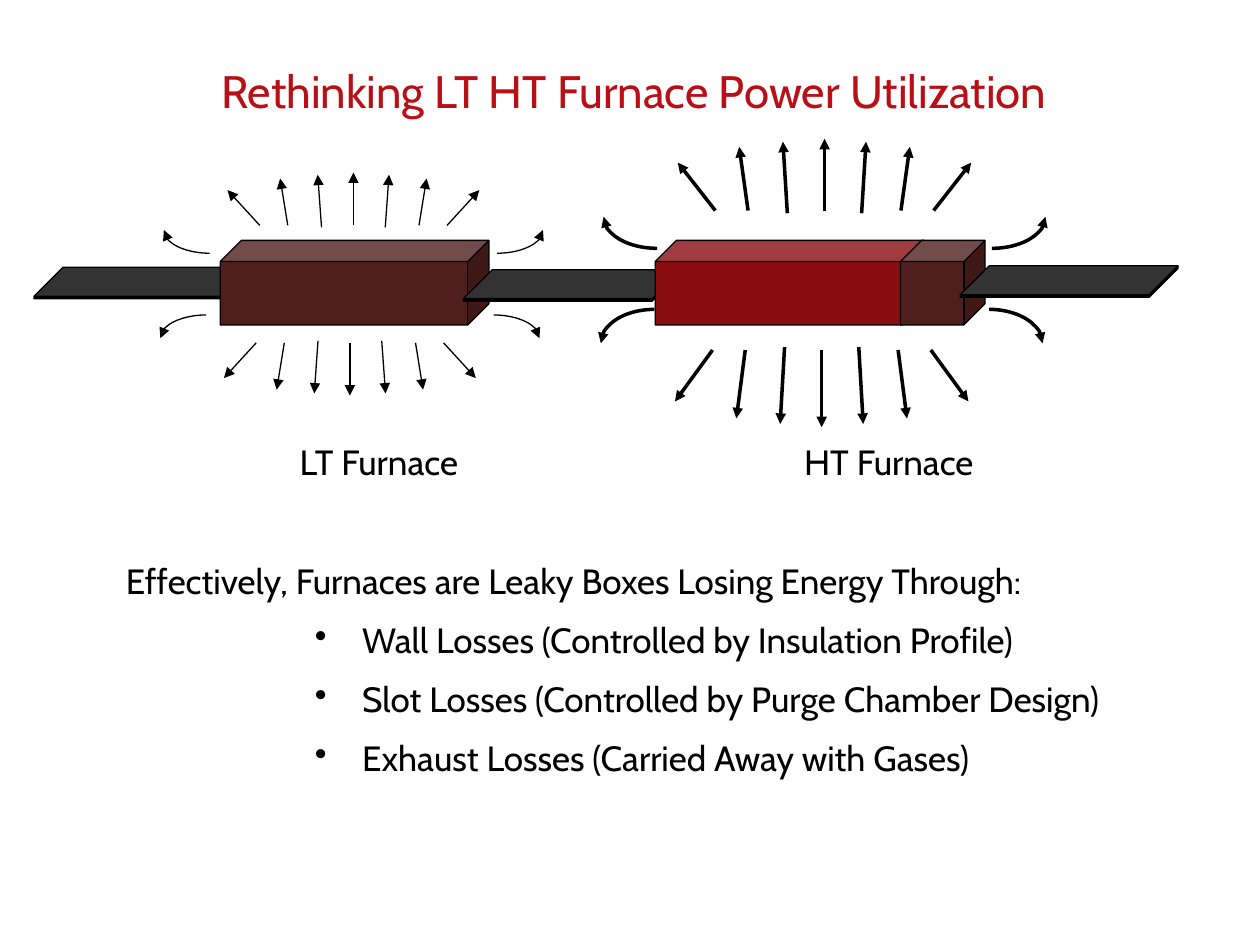
import lxml.etree
import pptx
import pptx.dml.color
import pptx.enum.shapes
import pptx.enum.text
import pptx.oxml.ns
import pptx.util

Pt = pptx.util.Pt
RGBColor = pptx.dml.color.RGBColor
MSO_SHAPE = pptx.enum.shapes.MSO_SHAPE
PP_ALIGN = pptx.enum.text.PP_ALIGN
qn = pptx.oxml.ns.qn

BLACK = RGBColor(0x00, 0x00, 0x00)
TITLE_RED = RGBColor(0xB7, 0x10, 0x17)
LOW_HEAT = RGBColor(0x4F, 0x1F, 0x1F)
HIGH_HEAT = RGBColor(0x89, 0x0C, 0x11)
FONT = "Cabin"

RAY_TIPS = [(0.168, 0.218), (0.307, 0.074), (0.406, 0.027), (0.5, 0)]
RAY_TAILS = [(0.253, 0.655), (0.327, 0.655), (0.416, 0.68), (0.5, 0.655)]
ARC_WIDTH, ARC_HEIGHT = 0.242, 0.577


def add_text(slide, box, lines, size, color=BLACK, wrap=True):
    tf = slide.shapes.add_textbox(*map(Pt, box)).text_frame
    tf.word_wrap = wrap
    tf.margin_left = tf.margin_right = Pt(6.5)
    tf.text = "\n".join(lines)
    for p in tf.paragraphs:
        for r in p.runs:
            r.font.name = FONT
            r.font.size = Pt(size)
            r.font.color.rgb = color
    return tf


def add_title(slide, box):
    tf = add_text(slide, box, ["Rethinking LT HT Furnace Power Utilization"],
                  26, TITLE_RED, wrap=False)
    p = tf.paragraphs[0]
    p.alignment = PP_ALIGN.CENTER
    p.line_spacing = 0.9


def add_cube(slide, box, color, depth=0.25):
    sp = slide.shapes.add_shape(MSO_SHAPE.CUBE, *map(Pt, box))
    sp.adjustments[0] = depth
    sp.shadow.inherit = False
    sp.fill.solid()
    sp.fill.fore_color.rgb = color
    sp.line.color.rgb = BLACK
    sp.line.width = Pt(0.75)


def style_arrow(sp, weight, end):
    sp.line.color.rgb = BLACK
    sp.line.width = Pt(weight)
    ln = sp.line._get_or_add_ln()
    lxml.etree.SubElement(ln, qn("a:" + end), type="triangle")


def add_ray(group, tip, tail, weight):
    line = group.shapes.add_connector(
        pptx.enum.shapes.MSO_CONNECTOR.STRAIGHT, *map(Pt, tip + tail))
    style_arrow(line, weight, "headEnd")
    lxml.etree.SubElement(line._element.spPr, qn("a:effectLst"))


def add_arc(group, box, weight, flip_h, flip_v):
    arc = group.shapes.add_shape(MSO_SHAPE.ARC, *map(Pt, box))
    arc.rotation = 180
    xfrm = arc._element.spPr.find(qn("a:xfrm"))
    xfrm.set("flipH", str(int(flip_h)))
    xfrm.set("flipV", str(int(flip_v)))
    arc.fill.background()
    style_arrow(arc, weight, "tailEnd")
    arc.shadow.inherit = False


def add_heat_fan(slide, box, weight, downward):
    left, top, width, height = box
    group = slide.shapes.add_group_shape()

    def place(point, mirrored):
        x, y = point
        x = 1 - x if mirrored else x
        y = 1 - y if downward else y
        return left + x * width, top + y * height

    for mirrored in (False, True):
        rays = list(zip(RAY_TIPS, RAY_TAILS))
        for tip, tail in rays[:-1] if mirrored else rays:
            add_ray(group, place(tip, mirrored), place(tail, mirrored), weight)
        arc_w, arc_h = ARC_WIDTH * width, ARC_HEIGHT * height
        arc_left = left + width - arc_w if mirrored else left
        arc_top = top if downward else top + height - arc_h
        add_arc(group, (arc_left, arc_top, arc_w, arc_h), weight, mirrored, downward)


def add_furnace_line(slide, left, top):
    def belt(x, y):
        add_cube(slide, (left + x, top + y, 124.5, 18), BLACK, 0.921)

    belt(0, 15.3)
    add_cube(slide, (left + 106.4, top, 153.5, 48.3), LOW_HEAT)
    belt(245.3, 16.7)
    add_cube(slide, (left + 354.9, top, 153.5, 48.3), HIGH_HEAT)
    add_cube(slide, (left + 495.1, top, 48.3, 48.3), LOW_HEAT)
    belt(529.2, 14.5)


def add_losses(slide, box):
    tf = add_text(slide, box, [
        "Effectively, Furnaces are Leaky Boxes Losing Energy Through:",
        "Wall Losses (Controlled by Insulation Profile)",
        "Slot Losses (Controlled by Purge Chamber Design)",
        "Exhaust Losses (Carried Away with Gases)",
    ], 20)
    for p in tf.paragraphs[1:]:
        p.level = 3
        p.space_before = Pt(9.7)
        pPr = p._p.get_or_add_pPr()
        pPr.set("marL", str(Pt(135)))
        pPr.set("indent", str(Pt(-27)))
        lxml.etree.SubElement(pPr, qn("a:buChar"), char="•")


def main():
    prs = pptx.Presentation()
    prs.slide_width, prs.slide_height = Pt(720), Pt(540)
    s = prs.slides.add_slide(prs.slide_layouts[6])
    add_title(s, (101.5, 36, 522, 35.3))
    add_furnace_line(s, 19.5, 137.4)
    add_heat_fan(s, (93.6, 98.6, 216.7, 46.1), 0.75, False)
    add_heat_fan(s, (91.6, 180, 216.7, 46.1), 0.75, True)
    add_heat_fan(s, (344.9, 79.3, 252.5, 62.6), 2, False)
    add_heat_fan(s, (343.3, 176.8, 252.5, 67.3), 2, True)
    for left, label in ((164.7, "LT Furnace"), (453, "HT Furnace")):
        add_text(s, (left, 248.4, 115, 32), [label], 20)
    add_losses(s, (65.5, 316.4, 623.5, 136))
    prs.save("out.pptx")


if __name__ == "__main__":
    main()
